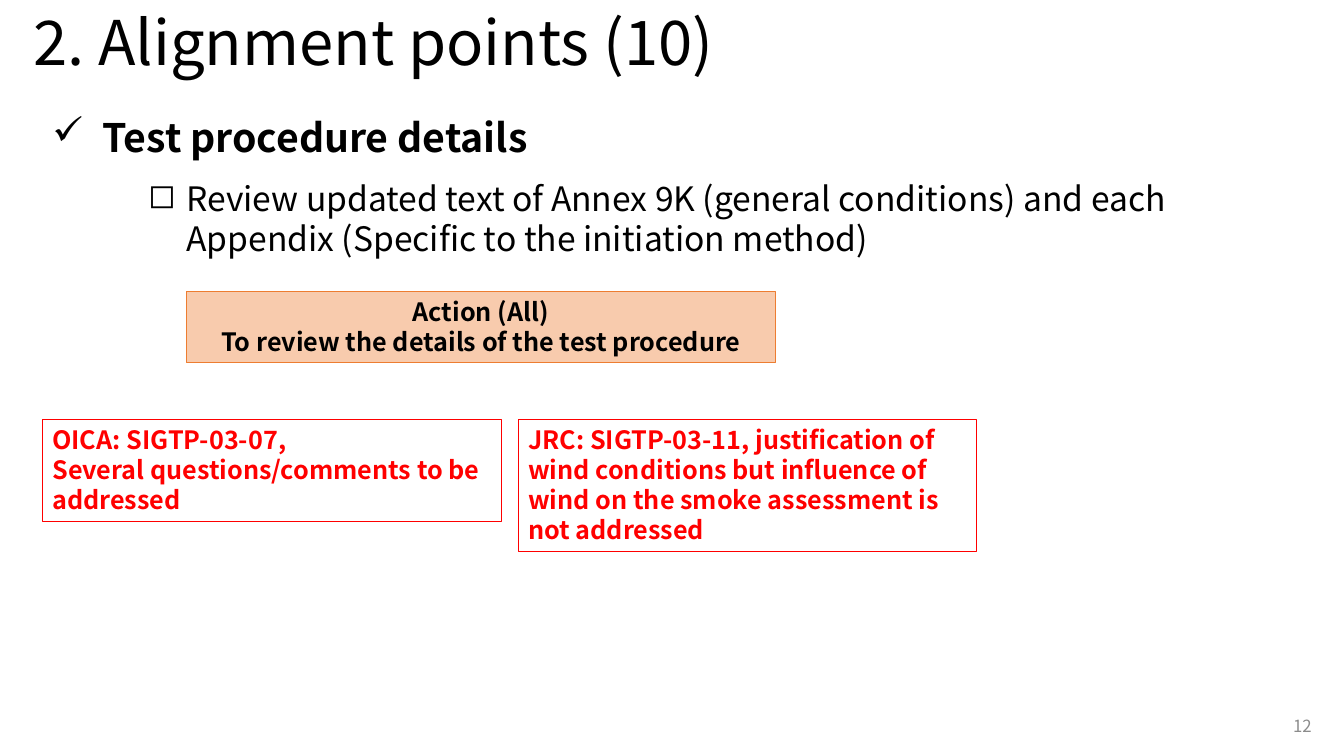
from lxml.etree import SubElement
from pptx import Presentation
from pptx.dml.color import RGBColor as RGB
from pptx.enum.shapes import MSO_SHAPE as Shape
from pptx.enum.text import MSO_ANCHOR as Anchor, MSO_AUTO_SIZE as Fit, PP_ALIGN as Align
from pptx.oxml.ns import qn
from pptx.util import Inches, Pt

FONT = "Noto Sans CJK JP"
LEAD = 1.19
HUES = {"ink": "000000", "grey": "8C8C8C", "red": "FF0000", "white": "FFFFFF",
        "peach": "F8CBAD", "rust": "ED7D31"}


def hue(name):
    return RGB.from_string(HUES[name])


def write(shape, lines, size, color="ink", bold=False, align=Align.LEFT,
          anchor=Anchor.TOP, grow=True, lead=None, mark=None, indent=0):
    """Fill a shape with one paragraph a line; mark is a bullet hung by indent inches."""
    frame = shape.text_frame
    frame.word_wrap = True
    frame.auto_size = Fit.SHAPE_TO_FIT_TEXT if grow else Fit.NONE
    frame.vertical_anchor = anchor
    for i, line in enumerate(lines):
        para = frame.add_paragraph() if i else frame.paragraphs[0]
        para.alignment = align
        para.line_spacing = lead or Pt(round(size * LEAD, 1))
        if mark:
            para.space_after = Pt(6)
            props = para._p.get_or_add_pPr()
            props.set("marL", str(Inches(indent)))
            props.set("indent", str(-Inches(indent)))
            SubElement(props, qn("a:buChar")).set("char", mark)
        run = para.add_run()
        run.text = line
        font = run.font
        font.name, font.size, font.bold = FONT, Pt(size), bold
        font.color.rgb = hue(color)
        SubElement(run._r.get_or_add_rPr(), qn("a:ea")).set("typeface", FONT)


def label(slide, box, lines, size, **style):
    write(slide.shapes.add_textbox(*map(Inches, box)), lines, size, **style)


def panel(slide, box, lines, fill, edge, **style):
    rect = slide.shapes.add_shape(Shape.RECTANGLE, *map(Inches, box))
    rect.shadow.inherit = False
    rect.fill.solid()
    rect.fill.fore_color.rgb = hue(fill)
    rect.line.color.rgb = hue(edge)
    rect.line.width = Pt(0.75)
    write(rect, lines, 18, bold=True, **style)


def header(slide, box):
    label(slide, box, ["2. Alignment points (10)"], 44,
          anchor=Anchor.MIDDLE, grow=False, lead=0.9)


def topic(slide, box):
    x, y, w, h = box
    label(slide, (x, y, w, 0.57), ["Test procedure details"], 28,
          bold=True, mark="✓", indent=0.5)
    label(slide, (x + 0.95, y + 0.64, w - 0.96, h - 0.64),
          ["Review updated text of Annex 9K (general conditions) and each "
           "Appendix (Specific to the initiation method)"], 24,
          mark="◻", indent=0.38)


def action(slide, box):
    panel(slide, box, ["Action (All)", "To review the details of the test procedure"],
          "peach", "rust", align=Align.CENTER)


def replies(slide, box):
    x, y, w, h = box
    gap = 0.17
    wide = (w - gap) / 2
    notes = [(h - 0.3, ["OICA: SIGTP-03-07,",
                        "Several questions/comments to be addressed"]),
             (h, ["JRC: SIGTP-03-11, justification of wind conditions but influence "
                  "of wind on the smoke assessment is not addressed"])]
    for i, (high, lines) in enumerate(notes):
        panel(slide, (x + i * (wide + gap), y, wide, high), lines,
              "white", "red", color="red")


def footer(slide, box):
    label(slide, box, ["12"], 12, color="grey", align=Align.RIGHT,
          anchor=Anchor.MIDDLE, grow=False)


def main():
    deck = Presentation()
    deck.slide_width, deck.slide_height = Inches(13.33), Inches(7.5)
    slide = deck.slides.add_slide(deck.slide_layouts[6])
    header(slide, (0.23, 0, 12.88, 0.91))
    topic(slide, (0.42, 1.08, 12.22, 1.55))
    action(slide, (1.85, 2.89, 5.84, 0.71))
    replies(slide, (0.42, 4.16, 9.27, 1.31))
    footer(slide, (10.11, 7, 3, 0.4))
    deck.save("out.pptx")


if __name__ == "__main__":
    main()
